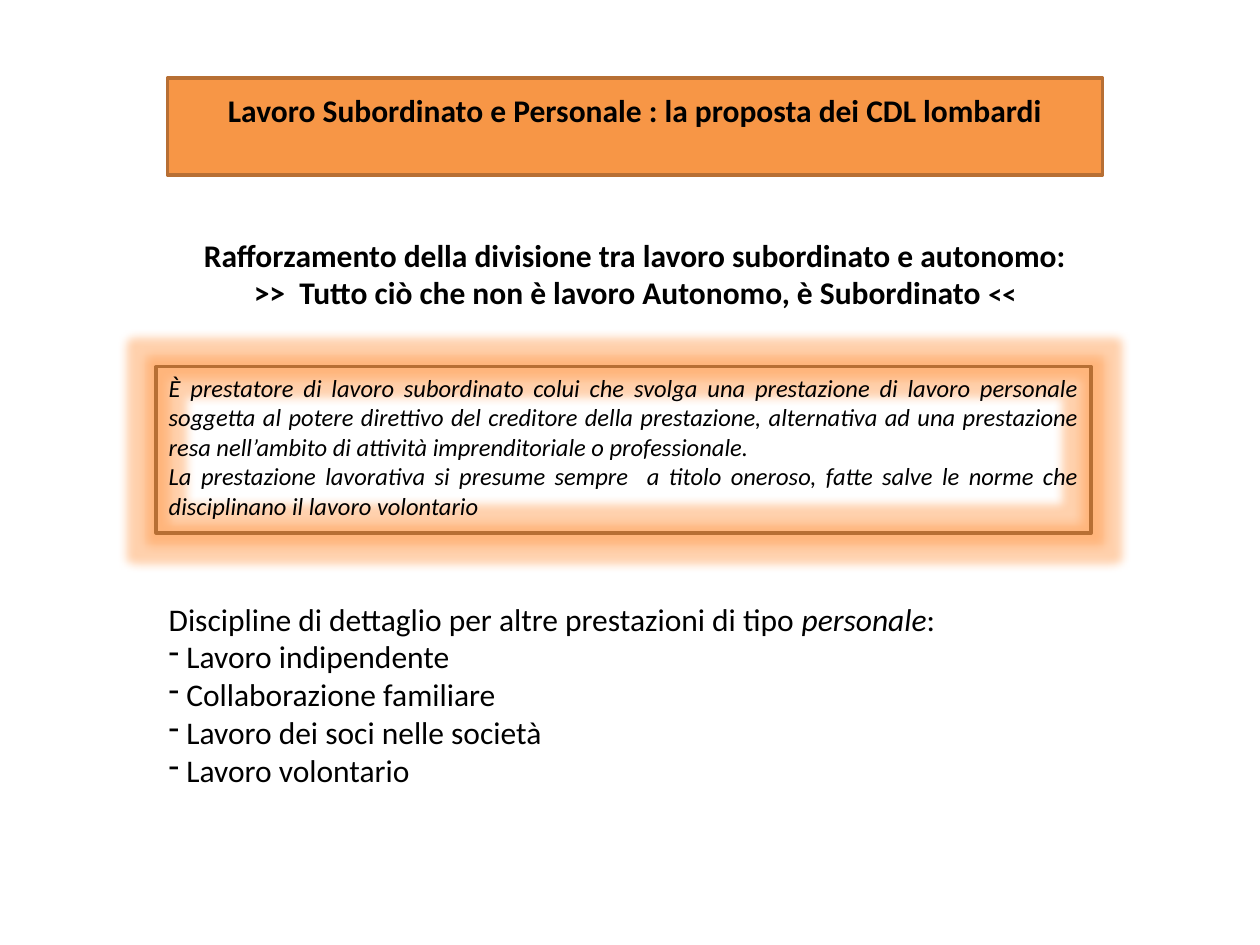
import pptx
import pptx.util
import pptx.dml.color
import pptx.enum.shapes
import pptx.enum.text
from lxml import etree
from pptx.oxml.ns import qn

Inches = pptx.util.Inches
ALIGN = pptx.enum.text.PP_ALIGN
ANCHOR = pptx.enum.text.MSO_ANCHOR

COLORS = {"text": "000000", "orange": "F79646", "border": "B76F34", "glow": "FF8C32"}
FONT = "Calibri"
BULLET_INDENT = Inches(0.14)


def rgb(name):
    return pptx.dml.color.RGBColor.from_string(COLORS[name])


def set_attrs(obj, values):
    for name, value in values.items():
        setattr(obj, name, value)


def add_paragraphs(tf, paragraphs, align, **font):
    """Each paragraph is a list of (text, font overrides) runs."""
    for i, runs in enumerate(paragraphs):
        p = tf.paragraphs[0] if i == 0 else tf.add_paragraph()
        p.alignment = align
        for text, overrides in runs:
            r = p.add_run()
            r.text = text
            set_attrs(r.font, {"name": FONT, **font, **overrides})
            r.font.color.rgb = rgb("text")


def add_box(slide, left, top, width, height, fill=None):
    sp = slide.shapes.add_shape(
        pptx.enum.shapes.MSO_SHAPE.RECTANGLE,
        Inches(left), Inches(top), Inches(width), Inches(height))
    sp.shadow.inherit = False
    if fill:
        sp.fill.solid()
        sp.fill.fore_color.rgb = rgb(fill)
    else:
        sp.fill.background()
    sp.line.color.rgb = rgb("border")
    sp.line.width = pptx.util.Pt(2)
    sp.text_frame.word_wrap = True
    return sp


def add_text(slide, left, top, width, height):
    tf = slide.shapes.add_textbox(
        Inches(left), Inches(top), Inches(width), Inches(height)).text_frame
    tf.word_wrap = True
    return tf


def add_glow(sp, radius):
    effects = sp._element.spPr.find(qn("a:effectLst"))
    glow = etree.SubElement(effects, qn("a:glow"), rad=str(int(radius)))
    color = etree.SubElement(glow, qn("a:srgbClr"), val=COLORS["glow"])
    etree.SubElement(color, qn("a:alpha"), val="40000")


def add_bullet(p):
    pPr = p._p.get_or_add_pPr()
    pPr.set("marL", str(int(BULLET_INDENT)))
    pPr.set("indent", str(-int(BULLET_INDENT)))
    etree.SubElement(pPr, qn("a:buChar"), char="-")


def main():
    prs = pptx.Presentation()
    set_attrs(prs, {"slide_width": Inches(10), "slide_height": Inches(7.5)})
    s = prs.slides.add_slide(prs.slide_layouts[6])
    body, small = pptx.util.Pt(18), pptx.util.Pt(14)

    # Title banner, with its line raised above the middle
    title = add_box(s, 1.33, 0.62, 7.42, 0.77, "orange").text_frame
    set_attrs(title, {"vertical_anchor": ANCHOR.MIDDLE, "margin_bottom": Inches(0.32)})
    add_paragraphs(title, [
        [("Lavoro Subordinato e Personale : la proposta dei CDL lombardi", {})],
    ], ALIGN.CENTER, size=body, bold=True)

    # Key statement
    statement = add_text(s, 1.33, 1.82, 7.42, 0.71)
    add_paragraphs(statement, [
        [("Rafforzamento della divisione tra lavoro subordinato e autonomo:", {})],
        [(">>  Tutto ciò che non è lavoro Autonomo, è Subordinato ", {}),
         ("<<", {"size": pptx.util.Pt(16)})],
    ], ALIGN.CENTER, size=body, bold=True)

    # Proposed definition in a glowing frame
    definition = add_box(s, 1.24, 2.91, 7.42, 1.32)
    add_glow(definition, pptx.util.Pt(11))
    definition.text_frame.vertical_anchor = ANCHOR.TOP
    add_paragraphs(definition.text_frame, [
        [("È prestatore di lavoro subordinato colui che svolga una prestazione di lavoro "
          "personale soggetta al potere direttivo del creditore della prestazione, "
          "alternativa ad una prestazione resa nell’ambito di attività imprenditoriale "
          "o professionale.", {})],
        [("La prestazione lavorativa si presume sempre  a titolo oneroso, fatte salve "
          "le norme che disciplinano il lavoro volontario", {})],
    ], ALIGN.JUSTIFY, size=small, italic=True)

    # Other kinds of personal work
    items = ["Lavoro indipendente", "Collaborazione familiare",
             "Lavoro dei soci nelle società", "Lavoro volontario"]
    details = add_text(s, 1.24, 4.71, 7.51, 1.92)
    intro = [("Discipline di dettaglio per altre prestazioni di tipo ", {}),
             ("personale", {"italic": True}), (":", {})]
    add_paragraphs(details, [intro] + [[(item, {})] for item in items],
                   ALIGN.LEFT, size=body)
    for p in details.paragraphs[1:]:
        add_bullet(p)

    prs.save("out.pptx")


if __name__ == "__main__":
    main()
